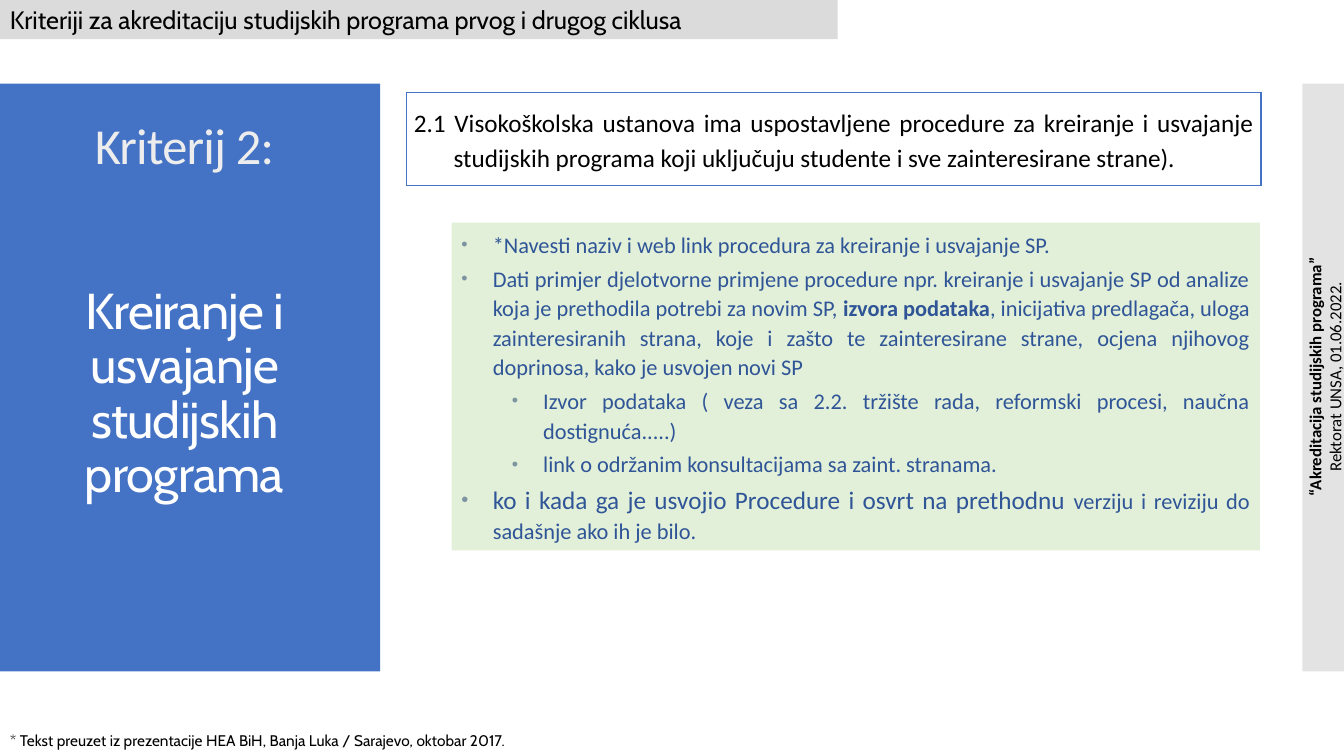
from lxml import etree
from pptx import Presentation
from pptx.dml.color import RGBColor
from pptx.enum.shapes import MSO_SHAPE
from pptx.enum.text import MSO_ANCHOR, PP_ALIGN
from pptx.oxml.ns import qn
from pptx.util import Cm, Pt

RECTANGLE = MSO_SHAPE.RECTANGLE
LEFT, CENTER, JUSTIFY = PP_ALIGN.LEFT, PP_ALIGN.CENTER, PP_ALIGN.JUSTIFY
TOP, MIDDLE = MSO_ANCHOR.TOP, MSO_ANCHOR.MIDDLE

BLUE = RGBColor(0x44, 0x72, 0xC4)
DARK_BLUE = RGBColor(0x2F, 0x55, 0x97)
GREEN = RGBColor(0xE2, 0xF0, 0xD9)
STRIP_GRAY = RGBColor(0xC8, 0xC8, 0xC8)
HEADER_GRAY = RGBColor(0xDB, 0xDB, 0xDB)
PALE_GRAY = RGBColor(0xED, 0xED, 0xED)
BULLET_GRAY = RGBColor(0x7D, 0x93, 0xA0)
WHITE = RGBColor(0xFF, 0xFF, 0xFF)
BLACK = RGBColor(0, 0, 0)

HEADER = "Kriteriji za akreditaciju studijskih programa prvog i drugog ciklusa"
CRITERION = "Kriterij 2:"
CRITERION_NAME = "Kreiranje i usvajanje studijskih programa"
REQUIREMENT = (
    "2.1 Visokoškolska ustanova ima uspostavljene procedure za kreiranje i usvajanje "
    "studijskih programa koji uključuju studente i sve zainteresirane strane)."
)
# Each bullet: level, then spans of (text, size, bold)
BULLETS = [
    (0, [("*Navesti naziv i web link procedura za kreiranje i usvajanje SP.", 16, False)]),
    (0, [
        ("Dati primjer djelotvorne primjene procedure npr. kreiranje i usvajanje SP od analize "
         "koja je prethodila potrebi za novim SP, ", 16, False),
        ("izvora podataka", 16, True),
        (", inicijativa predlagača, uloga zainteresiranih strana, koje i zašto te "
         "zainteresirane strane, ocjena njihovog doprinosa, kako je usvojen novi SP", 16, False),
    ]),
    (1, [("Izvor podataka ( veza sa 2.2. tržište rada, reformski procesi, "
          "naučna dostignuća.....)", 16, False)]),
    (1, [("link o održanim konsultacijama sa zaint. stranama.", 16, False)]),
    (0, [
        ("ko i kada ga je usvojio Procedure i osvrt na prethodnu ", 18, False),
        ("verziju i reviziju do sadašnje ako ih je bilo.", 16, False),
    ]),
]
EVENT = "“Akreditacija studijskih programa”"
PLACE_AND_DATE = "Rektorat UNSA, 01.06.2022."
FOOTNOTE = "* Tekst preuzet iz prezentacije HEA BiH, Banja Luka / Sarajevo, oktobar 2017."

PAGE_WIDTH, PAGE_HEIGHT = 33.87, 19.05
BAND_TOP, BAND_HEIGHT = 2.11, 14.81
STRIP_WIDTH = 1.05
BULLET_HANG, LEVEL_STEP = 0.79, 1.27

deck = Presentation()
deck.slide_width, deck.slide_height = Cm(PAGE_WIDTH), Cm(PAGE_HEIGHT)
page = deck.slides.add_slide(deck.slide_layouts[6])


def add_panel(left, top, width, height, color):
    panel = page.shapes.add_shape(RECTANGLE, Cm(left), Cm(top), Cm(width), Cm(height))
    panel.shadow.inherit = False
    panel.fill.solid()
    panel.fill.fore_color.rgb = color
    panel.line.fill.background()
    return panel


def add_text_box(left, top, width, height):
    return page.shapes.add_textbox(Cm(left), Cm(top), Cm(width), Cm(height))


def prepare_frame(box, anchor):
    frame = box.text_frame
    frame.word_wrap = True
    frame.vertical_anchor = anchor
    return frame


def next_para(frame, align, spacing=1.0, before=0):
    """Use the empty first paragraph, or append another one."""
    first = frame.paragraphs[0]
    para = frame.add_paragraph() if first.runs else first
    para.alignment = align
    para.line_spacing = spacing
    para.space_before = Pt(before)
    return para


def add_span(para, text, size, font="Calibri", color=BLACK, bold=False):
    span = para.add_run()
    span.text = text
    span.font.size = Pt(size)
    span.font.name = font
    span.font.color.rgb = color
    span.font.bold = bold
    return span


def set_indent(para, left, hanging):
    properties = para._p.get_or_add_pPr()
    properties.set("marL", str(Cm(left)))
    properties.set("indent", str(-Cm(hanging)))
    return properties


def add_bullet(properties):
    color = etree.SubElement(properties, qn("a:buClr"))
    etree.SubElement(color, qn("a:srgbClr"), val=str(BULLET_GRAY))
    etree.SubElement(properties, qn("a:buSzPct"), val="80000")
    etree.SubElement(properties, qn("a:buFont"), typeface="Arial")
    etree.SubElement(properties, qn("a:buChar"), char="•")


def add_cell_borders(cell, color):
    properties = cell._tc.get_or_add_tcPr()
    for position, side in enumerate(("a:lnL", "a:lnR", "a:lnT", "a:lnB")):
        border = etree.Element(qn(side), w=str(Pt(1)))
        fill = etree.SubElement(border, qn("a:solidFill"))
        etree.SubElement(fill, qn("a:srgbClr"), val=str(color))
        properties.insert(position, border)


# Side bands
add_panel(0, BAND_TOP, 9.58, BAND_HEIGHT, BLUE)
strip = add_panel(PAGE_WIDTH - STRIP_WIDTH, BAND_TOP, STRIP_WIDTH, BAND_HEIGHT, STRIP_GRAY)
strip_color = strip._element.spPr.find(qn("a:solidFill"))[0]
etree.SubElement(strip_color, qn("a:alpha"), val="50000")

# Criterion title
title = prepare_frame(add_text_box(0.56, 2.92, 8.18, 12.78), TOP)
for text, font, color, before in (
    (CRITERION, "Calibri", PALE_GRAY, 0),
    (CRITERION_NAME, "Cabin", WHITE, 79),
):
    span = add_span(next_para(title, CENTER, 0.9, before), text, 36, font, color)
    span._r.get_or_add_rPr().set("spc", "-60")

# Requirement
table = page.shapes.add_table(1, 1, Cm(10.24), Cm(2.34), Cm(21.54), Cm(2.34)).table
cell = table.cell(0, 0)
cell.fill.solid()
cell.fill.fore_color.rgb = WHITE
cell.vertical_anchor = MIDDLE
cell.margin_left = cell.margin_right = Cm(0.19)
cell.margin_top = cell.margin_bottom = 0
add_cell_borders(cell, BLUE)
para = next_para(cell.text_frame, JUSTIFY, 1.14, 3)
para.space_after = Pt(3)
set_indent(para, 1, 1)
add_span(para, REQUIREMENT, 18)

# Event label along the right edge
label = add_text_box(28.24, 8.86, 10.29, 1.27)
label.rotation = 270
label_frame = prepare_frame(label, TOP)
for text, bold in ((EVENT, True), (PLACE_AND_DATE, False)):
    add_span(next_para(label_frame, CENTER), text, 12, bold=bold)

# Header and footnote
header = prepare_frame(add_panel(0, -0.03, 21.11, 1.02, HEADER_GRAY), MIDDLE)
add_span(next_para(header, LEFT), HEADER, 18, "Cabin")
footnote = prepare_frame(add_text_box(0, 18.31, PAGE_WIDTH, 0.74), TOP)
add_span(next_para(footnote, LEFT), FOOTNOTE, 11, "Cabin")

# Guidance
guidance = prepare_frame(add_panel(11.38, 5.61, 20.37, 8.26, GREEN), MIDDLE)
for level, spans in BULLETS:
    para = next_para(guidance, JUSTIFY, 1.1, 3)
    para.level = level
    add_bullet(set_indent(para, BULLET_HANG + level * LEVEL_STEP, BULLET_HANG))
    for text, size, bold in spans:
        add_span(para, text, size, color=DARK_BLUE, bold=bold)

deck.save("out.pptx")
